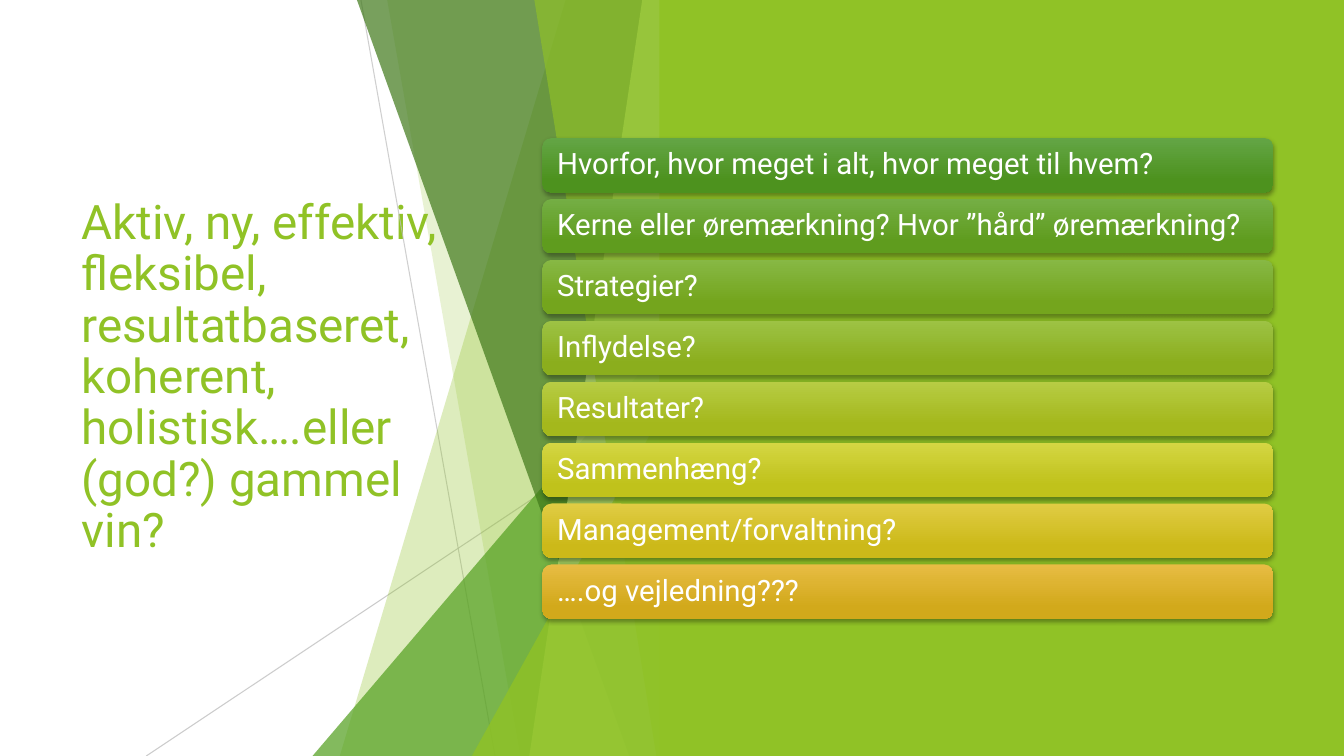
from lxml import etree
from pptx import Presentation
from pptx.dml.color import RGBColor
from pptx.enum.shapes import MSO_CONNECTOR, MSO_SHAPE
from pptx.enum.text import MSO_ANCHOR, PP_ALIGN
from pptx.oxml.ns import qn
from pptx.util import Inches, Pt

STRAIGHT = MSO_CONNECTOR.STRAIGHT
RECT = MSO_SHAPE.RECTANGLE
ROUND_RECT = MSO_SHAPE.ROUNDED_RECTANGLE
TRIANGLE = MSO_SHAPE.ISOSCELES_TRIANGLE
MIDDLE = MSO_ANCHOR.MIDDLE
LEFT = PP_ALIGN.LEFT

WIDTH, HEIGHT = 13.33, 7.5
FACET_RIGHT = 6.66
COLORS = {
    "lime": "90C226",
    "green": "54A021",
    "forest": "3F7819",
    "pale": "C0E474",
    "gray": "BFBFBF",
    "white": "FFFFFF",
    "shadow": "000000",
}

TITLE = ("Aktiv, ny, effektiv, fleksibel, resultatbaseret, koherent, "
         "holistisk….eller (god?) gammel vin?")
QUESTIONS = [
    ("Hvorfor, hvor meget i alt, hvor meget til hvem?", "63A545", "4D921E"),
    ("Kerne eller øremærkning? Hvor ”hård” øremærkning?", "74AE44", "5F9C1E"),
    ("Strategier?", "87B844", "74A51D"),
    ("Inflydelse?", "9DC244", "8BAE1D"),
    ("Resultater?", "B7CC44", "A4B81C"),
    ("Sammenhæng?", "D4D643", "C0C21B"),
    ("Management/forvaltning?", "E0CC43", "CCB919"),
    ("….og vejledning???", "E7BC43", "D2A91B"),
]
BAR_LEFT, BAR_TOP, BAR_WIDTH, BAR_HEIGHT = 5.38, 1.37, 7.25, 0.54
LAST_BAR_TOP = 5.6
BAR_PITCH = (LAST_BAR_TOP - BAR_TOP) / (len(QUESTIONS) - 1)


class SlideBuilder:
    font = "Roboto"

    def __init__(self, slide):
        self.slide = slide

    def rgb(self, name):
        return RGBColor.from_string(COLORS.get(name, name))

    def set_alpha(self, s, percent):
        for color in s._element.spPr.iter(qn("a:srgbClr")):
            etree.SubElement(color, qn("a:alpha"), val=str(percent * 1000))

    def paint(self, s, color, alpha=100):
        s.shadow.inherit = False
        s.line.fill.background()
        s.fill.solid()
        s.fill.fore_color.rgb = self.rgb(color)
        if alpha < 100:
            self.set_alpha(s, alpha)

    def shape(self, kind, x, y, w, h):
        return self.slide.shapes.add_shape(
            kind, Inches(x), Inches(y), Inches(w), Inches(h))

    def line(self, x1, y1, x2, y2, alpha):
        s = self.slide.shapes.add_connector(
            STRAIGHT, Inches(x1), Inches(y1), Inches(x2), Inches(y2))
        s.line.color.rgb = self.rgb("gray")
        s.line.width = Pt(0.75)
        self.set_alpha(s, alpha)
        etree.SubElement(s._element.spPr, qn("a:effectLst"))

    def facet(self, top_x, bottom_x, color, alpha):
        points = [(FACET_RIGHT, 0), (FACET_RIGHT, HEIGHT), (bottom_x, HEIGHT)]
        builder = self.slide.shapes.build_freeform(Inches(top_x), 0)
        builder.add_line_segments([(Inches(x), Inches(y)) for x, y in points])
        self.paint(builder.convert_to_shape(), color, alpha)

    def corner(self, x, y, color, alpha):
        s = self.shape(TRIANGLE, x, y, FACET_RIGHT - x, HEIGHT - y)
        s.adjustments[0] = 1
        self.paint(s, color, alpha)

    def panel(self, x, color):
        self.paint(self.shape(RECT, x, 0, WIDTH - x, HEIGHT), color)

    def set_text(self, s, text, size, color, inset):
        tf = s.text_frame
        tf.word_wrap = True
        tf.vertical_anchor = MIDDLE
        tf.margin_left = tf.margin_right = Inches(inset)
        tf.text = text
        p = tf.paragraphs[0]
        p.alignment = LEFT
        p.line_spacing = 0.9
        r = p.runs[0]
        r.font.name = self.font
        r.font.size = Pt(size)
        r.font.color.rgb = self.rgb(color)

    def title(self, text, x, y, w, h):
        s = self.slide.shapes.add_textbox(
            Inches(x), Inches(y), Inches(w), Inches(h))
        self.set_text(s, text, 34, "lime", 0.1)

    def bar(self, text, y, top_color, bottom_color):
        s = self.shape(ROUND_RECT, BAR_LEFT, y, BAR_WIDTH, BAR_HEIGHT)
        s.line.fill.background()
        s.fill.gradient()
        s.fill.gradient_angle = 270
        stops = zip(s.fill.gradient_stops, (0, 0.78), (top_color, bottom_color))
        for stop, position, color in stops:
            stop.position = position
            stop.color.rgb = self.rgb(color)
        self.drop_shadow(s)
        self.set_text(s, text, 21, "white", 0.12)

    def drop_shadow(self, s):
        s.shadow.inherit = False
        effects = s._element.spPr.find(qn("a:effectLst"))
        shadow = etree.SubElement(
            effects, qn("a:outerShdw"), blurRad=str(Pt(3)), dist=str(Pt(2)),
            dir="5400000", rotWithShape="0")
        color = etree.SubElement(shadow, qn("a:srgbClr"), val=COLORS["shadow"])
        etree.SubElement(color, qn("a:alpha"), val="35000")


def main():
    prs = Presentation()
    prs.slide_width = Inches(WIDTH)
    prs.slide_height = Inches(HEIGHT)
    b = SlideBuilder(prs.slides.add_slide(prs.slide_layouts[6]))

    b.title(TITLE, 0.71, 1.51, 3.88, 4.48)
    b.line(3.58, 0, 4.91, HEIGHT, 75)
    b.line(FACET_RIGHT, 4.03, 1.45, HEIGHT, 80)
    b.facet(5.61, 3.37, "lime", 30)
    b.facet(3.84, 5.16, "lime", 20)
    b.corner(3.1, 3.33, "green", 72)
    b.facet(3.54, 6.24, "forest", 70)
    b.facet(6.37, 5.25, "pale", 70)
    b.facet(5.3, 6.51, "lime", 65)
    b.corner(4.68, 3.93, "lime", 80)
    b.panel(6.54, "lime")
    for i, (text, top_color, bottom_color) in enumerate(QUESTIONS):
        b.bar(text, BAR_TOP + i * BAR_PITCH, top_color, bottom_color)

    prs.save("out.pptx")


if __name__ == "__main__":
    main()
